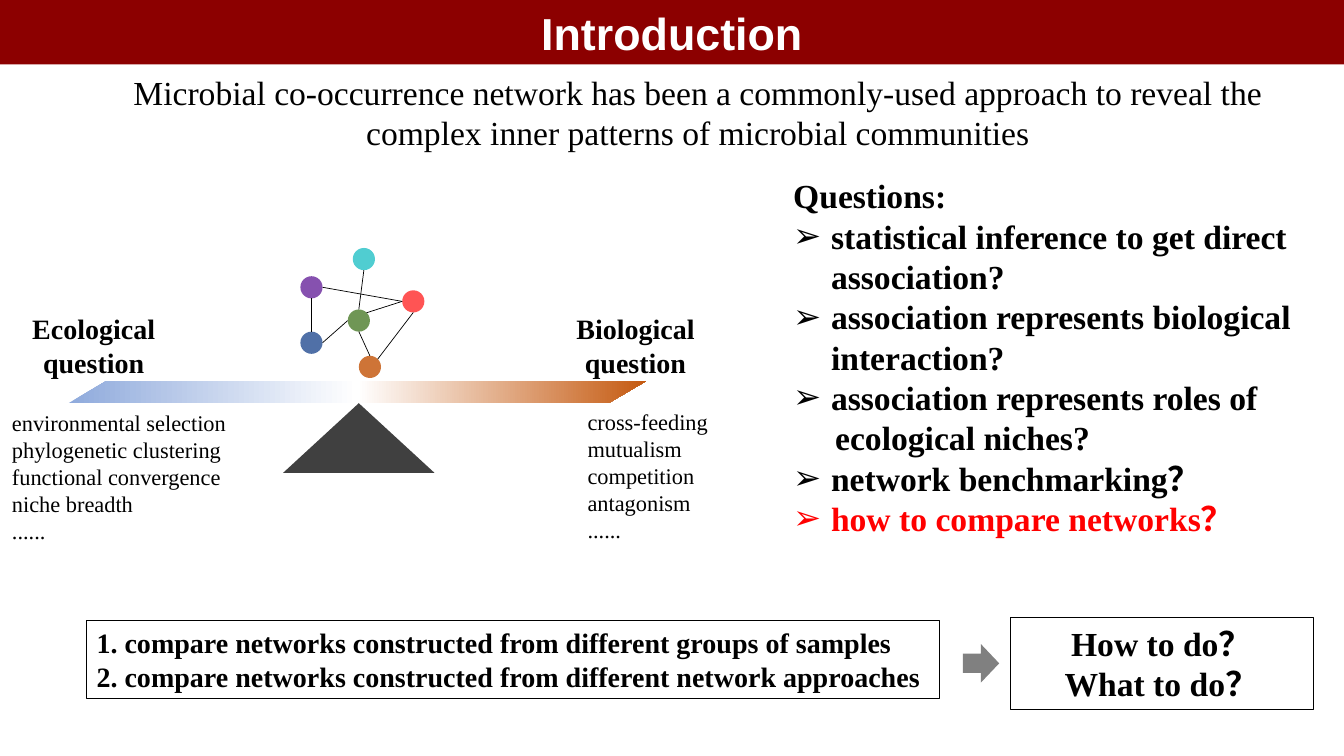
from copy import deepcopy

from lxml.etree import SubElement
from pptx import Presentation
from pptx.dml.color import RGBColor
from pptx.enum.shapes import MSO_CONNECTOR, MSO_SHAPE
from pptx.enum.text import MSO_ANCHOR, MSO_AUTO_SIZE, PP_ALIGN
from pptx.oxml.ns import qn
from pptx.util import Pt

COLORS = {
    "banner": "8C0000", "white": "FFFFFF", "black": "000000", "alert": "FF0000",
    "pivot": "404040", "arrow": "808080", "ecology": "8FAADC", "biology": "C55A11",
    "purple": "7030A0", "red": "FF0000", "blue": "2F5597",
    "orange": "C55A11", "green": "548235", "cyan": "2FC4C9",
}
SERIF = "Times New Roman"
NODE_SIZE = 15.84
NODES = {
    "purple": (214.56, 197.28, 84), "red": (287.28, 207.36, 67),
    "blue": (214.56, 236.88, 84), "orange": (256.32, 254.16, 84),
    "green": (248.4, 221.04, 84), "cyan": (252, 177.12, 84),
}
ANCHORS = {
    "top": (0.5, 0), "bottom": (0.5, 1), "left": (0, 0.5), "right": (1, 0.5),
    "upper right": (0.85, 0.15),
}
EDGES = [
    ("purple", "bottom", "blue", "top"),
    ("green", "bottom", "orange", "top"),
    ("blue", "right", "green", "left"),
    ("green", "upper right", "red", "left"),
    ("green", "top", "cyan", "bottom"),
    ("purple", "right", "red", "left"),
    ("orange", "upper right", "red", "bottom"),
]
QUESTIONS = [
    ("Questions:", None, "black"),
    ("statistical inference to get direct association?", "bullet", "black"),
    ("association represents biological interaction?", "bullet", "black"),
    ("association represents roles of", "bullet", "black"),
    ("ecological niches?", "indent", "black"),
    ("network benchmarking？", "bullet", "black"),
    ("how to compare networks？", "bullet", "alert"),
]
ECOLOGY = ["environmental selection", "phylogenetic clustering",
           "functional convergence", "niche breadth", "......"]
BIOLOGY = ["cross-feeding", "mutualism", "competition", "antagonism", "......"]
COMPARISONS = ["1. compare networks constructed from different groups of samples",
               "2. compare networks constructed from different network approaches"]


def rgb(name):
    """Return the named colour."""
    return RGBColor.from_string(COLORS[name])


def add_figure(slide, kind, box, fill=None, line=None):
    """Add a preset shape with a plain fill or a thin outline."""
    figure = slide.shapes.add_shape(kind, *map(Pt, box))
    figure.shadow.inherit = False
    if fill:
        figure.fill.solid()
        figure.fill.fore_color.rgb = rgb(fill)
    else:
        figure.fill.background()
    if line:
        figure.line.color.rgb = rgb(line)
        figure.line.width = Pt(0.75)
    else:
        figure.line.fill.background()
    return figure


def indent(paragraph, style):
    """Give a paragraph an arrow bullet or a matching left indent."""
    properties = paragraph._p.get_or_add_pPr()
    if style == "bullet":
        properties.set("marL", str(Pt(27)))
        properties.set("indent", str(Pt(-27)))
        SubElement(properties, qn("a:buFont"), typeface="Arial")
        SubElement(properties, qn("a:buChar"), char="➢")
    elif style == "indent":
        properties.set("marL", str(Pt(30)))


def write(holder, lines, size, bold=False, align=PP_ALIGN.LEFT, font=SERIF,
          anchor=MSO_ANCHOR.TOP, fit=MSO_AUTO_SIZE.SHAPE_TO_FIT_TEXT):
    """Write lines of (text, indent style, colour) into a shape."""
    frame = holder.text_frame
    frame.word_wrap = True
    frame.auto_size = fit
    frame.vertical_anchor = anchor
    for number, (text, style, color) in enumerate(lines):
        paragraph = frame.add_paragraph() if number else frame.paragraphs[0]
        paragraph.alignment = align
        indent(paragraph, style)
        run = paragraph.add_run()
        run.text = text
        run.font.name = font
        run.font.size = Pt(size)
        run.font.bold = bold
        run.font.color.rgb = rgb(color)


def plain(lines):
    """Mark lines as black and without indent."""
    return [(line, None, "black") for line in lines]


def add_text(slide, box, lines, size, **options):
    """Add a text box with the given lines."""
    write(slide.shapes.add_textbox(*map(Pt, box)), lines, size, **options)


def add_beam(slide):
    """Add the balance beam, fading from ecology to biology."""
    beam = add_figure(slide, MSO_SHAPE.PARALLELOGRAM, (48.96, 272.16, 412.56, 15.84))
    beam.adjustments[0] = 1.696
    beam.fill.gradient()
    beam.fill.gradient_angle = 0
    first, last = beam.fill.gradient_stops
    first.color.rgb, first.position = rgb("ecology"), 0
    last.color.rgb, last.position = rgb("biology"), 1
    stops = beam._element.spPr.find(qn("a:gradFill")).find(qn("a:gsLst"))
    stops.insert(1, deepcopy(stops[0]))
    middle = beam.fill.gradient_stops[1]
    middle.color.rgb, middle.position = rgb("white"), 0.5


def add_node(slide, name):
    """Add one translucent network node."""
    left, top, opacity = NODES[name]
    node = add_figure(slide, MSO_SHAPE.OVAL, (left, top, NODE_SIZE, NODE_SIZE), name)
    color = node._element.spPr.find(qn("a:solidFill"))[0]
    SubElement(color, qn("a:alpha"), val=str(opacity * 1000))


def node_point(name, side):
    """Return the point on a node's rim for a side."""
    left, top, _ = NODES[name]
    across, down = ANCHORS[side]
    return Pt(left + across * NODE_SIZE), Pt(top + down * NODE_SIZE)


def add_edge(slide, start, start_side, end, end_side):
    """Link two network nodes with a thin line."""
    edge = slide.shapes.add_connector(
        MSO_CONNECTOR.STRAIGHT, *node_point(start, start_side), *node_point(end, end_side))
    edge.line.color.rgb = rgb("black")
    edge.line.width = Pt(0.5)
    SubElement(edge._element.spPr, qn("a:effectLst"))


def main():
    """Build the introduction slide."""
    deck = Presentation()
    deck.slide_width, deck.slide_height = Pt(960), Pt(540)
    slide = deck.slides.add_slide(deck.slide_layouts[6])
    center = PP_ALIGN.CENTER

    banner = add_figure(slide, MSO_SHAPE.RECTANGLE, (0, 0, 960, 46), "banner")
    write(banner, [("Introduction", None, "white")], 32, bold=True, align=center,
          font="Arial", anchor=MSO_ANCHOR.MIDDLE, fit=MSO_AUTO_SIZE.NONE)
    add_text(slide, (46, 47.5, 905, 65.5), plain([
        "Microbial co-occurrence network has been a commonly-used approach "
        "to reveal the complex inner patterns of microbial communities"]), 24, align=center)

    add_figure(slide, MSO_SHAPE.ISOSCELES_TRIANGLE, (202.32, 288, 108, 49.68), "pivot")
    add_beam(slide)
    for left, field in ((5, "Ecological"), (392, "Biological")):
        add_text(slide, (left, 219, 124, 55.5), plain([f"{field} question"]), 20,
                 bold=True, align=center)
    for name in NODES:
        add_node(slide, name)
    for edge in EDGES:
        add_edge(slide, *edge)

    add_text(slide, (559.5, 121.7, 453, 298), QUESTIONS, 24, bold=True)
    add_text(slide, (412.6, 288, 121, 104.4), plain(BIOLOGY), 16)
    add_text(slide, (1.5, 288.7, 188, 104.4), plain(ECOLOGY), 16)

    comparisons = add_figure(
        slide, MSO_SHAPE.RECTANGLE, (61.9, 443.5, 609, 55.5), line="black")
    write(comparisons, plain(COMPARISONS), 20, bold=True)
    arrow = add_figure(slide, MSO_SHAPE.DOWN_ARROW, (687, 460.8, 27.4, 26), "arrow")
    arrow.rotation = 270
    tasks = add_figure(slide, MSO_SHAPE.RECTANGLE, (721.5, 441.4, 216.5, 65.5), line="black")
    write(tasks, plain(["How to do？", "What to do？"]), 24, bold=True, align=center)

    deck.save("out.pptx")


if __name__ == "__main__":
    main()
